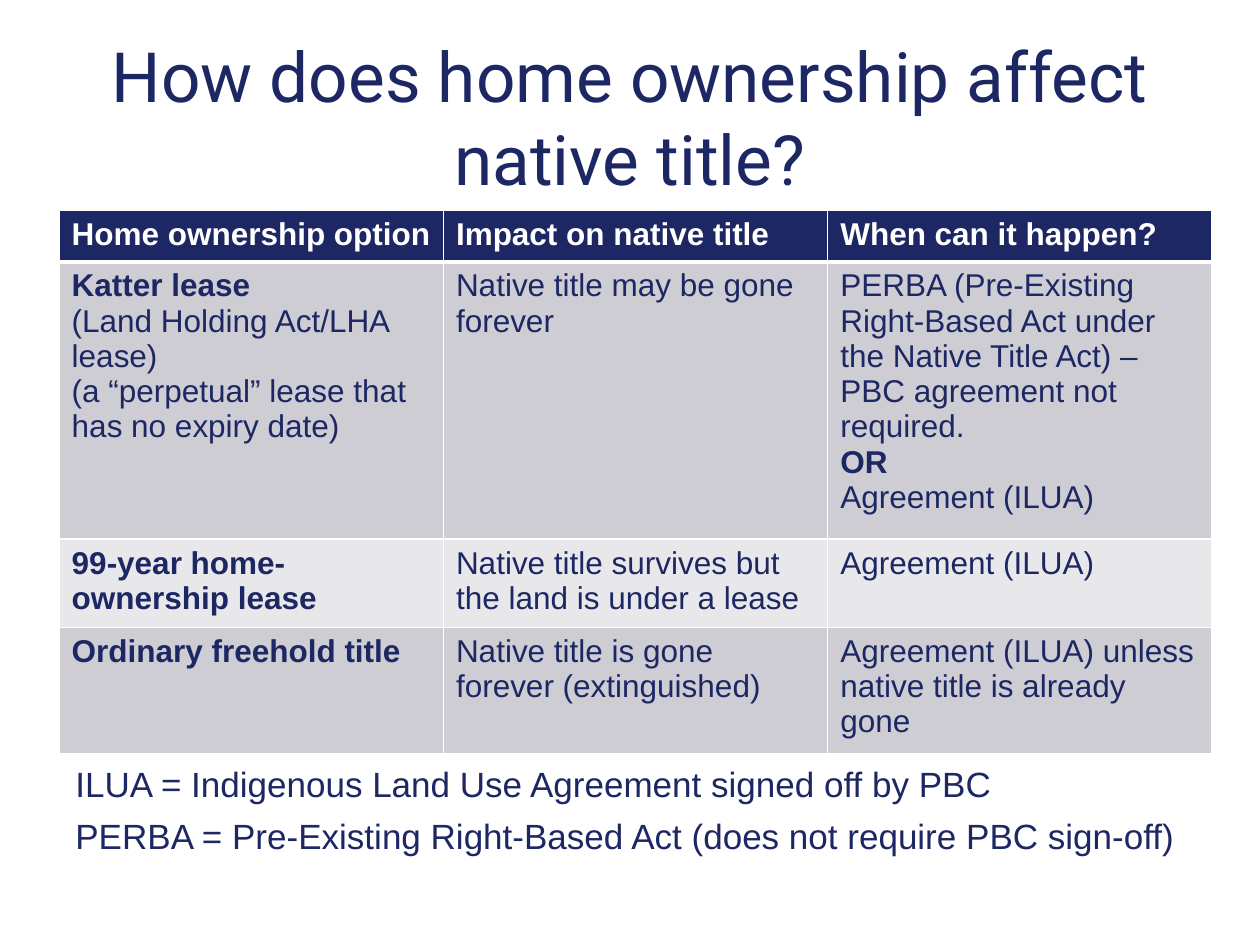
"""Builds the slide on how home ownership options affect native title."""
from lxml import etree
from pptx import Presentation
from pptx.dml.color import RGBColor
from pptx.enum.text import MSO_ANCHOR, PP_ALIGN
from pptx.oxml.ns import qn
from pptx.util import Pt

CENTER, LEFT = PP_ALIGN.CENTER, PP_ALIGN.LEFT
MIDDLE, TOP = MSO_ANCHOR.MIDDLE, MSO_ANCHOR.TOP
COLORS = {"navy": "1D2763", "white": "FFFFFF", "dark": "CDCDD3", "light": "E8E8EA"}

BOLD = {"Katter lease", "OR", "99-year home-ownership lease", "Ordinary freehold title"}
ROWS = [
    (29.5, "navy", ["Home ownership option", "Impact on native title", "When can it happen?"]),
    (148, "dark", [
        "Katter lease\n(Land Holding Act/LHA lease)\n"
        "(a “perpetual” lease that has no expiry date)",
        "Native title may be gone forever",
        "PERBA (Pre-Existing Right-Based Act under the Native Title Act) – "
        "PBC agreement not required.\nOR\nAgreement (ILUA)"]),
    (47.4, "light", ["99-year home-ownership lease",
                     "Native title survives but the land is under a lease",
                     "Agreement (ILUA)"]),
    (67.5, "dark", ["Ordinary freehold title",
                    "Native title is gone forever (extinguished)",
                    "Agreement (ILUA) unless native title is already gone"]),
]


def write(tf, text, size, font, color, align=LEFT, gap=0):
    tf.word_wrap = True
    tf.text = text
    for i, p in enumerate(tf.paragraphs):
        p.alignment = align
        if i and gap:
            p.space_before = Pt(gap)
        for r in p.runs:
            r.font.size = Pt(size)
            r.font.name = font
            r.font.bold = r.text in BOLD
            r.font.color.rgb = RGBColor.from_string(COLORS[color])


def add_border(cell, side, width):
    ln = etree.SubElement(cell._tc.get_or_add_tcPr(), qn("a:" + side), w=str(Pt(width)))
    fill = etree.SubElement(ln, qn("a:solidFill"))
    etree.SubElement(fill, qn("a:srgbClr"), val=COLORS["white"])


prs = Presentation()
prs.slide_width, prs.slide_height = Pt(720), Pt(540)
s = prs.slides.add_slide(prs.slide_layouts[6])

title = s.shapes.add_textbox(Pt(36), Pt(21.6), Pt(648), Pt(90))
title.text_frame.vertical_anchor = MIDDLE
write(title.text_frame, "How does home ownership affect native title?",
      39.6, "Roboto", "navy", CENTER)

notes = s.shapes.add_textbox(Pt(36), Pt(430), Pt(648), Pt(83))
notes.text_frame.margin_top = Pt(6)
write(notes.text_frame,
      "ILUA = Indigenous Land Use Agreement signed off by PBC\n"
      "PERBA = Pre-Existing Right-Based Act (does not require PBC sign-off)",
      20, "Arial", "navy", gap=5.6)

height = sum(row[0] for row in ROWS)
table = s.shapes.add_table(len(ROWS), 3, Pt(33.8), Pt(120.2), Pt(658.8), Pt(height)).table
for col in table.columns:
    col.width = Pt(219.6)

for i, (row_height, fill, texts) in enumerate(ROWS):
    table.rows[i].height = Pt(row_height)
    for j, text in enumerate(texts):
        cell = table.cell(i, j)
        cell.vertical_anchor = TOP
        add_border(cell, "lnL", 1)
        add_border(cell, "lnR", 1)
        add_border(cell, "lnT", 3 if i == 1 else 1)
        add_border(cell, "lnB", 3 if i == 0 else 1)
        cell.fill.solid()
        cell.fill.fore_color.rgb = RGBColor.from_string(COLORS[fill])
        write(cell.text_frame, text, 18, "Arial", "navy" if i else "white")
        if i == 0:
            cell.text_frame.paragraphs[0].runs[0].font.bold = True

prs.save("out.pptx")
